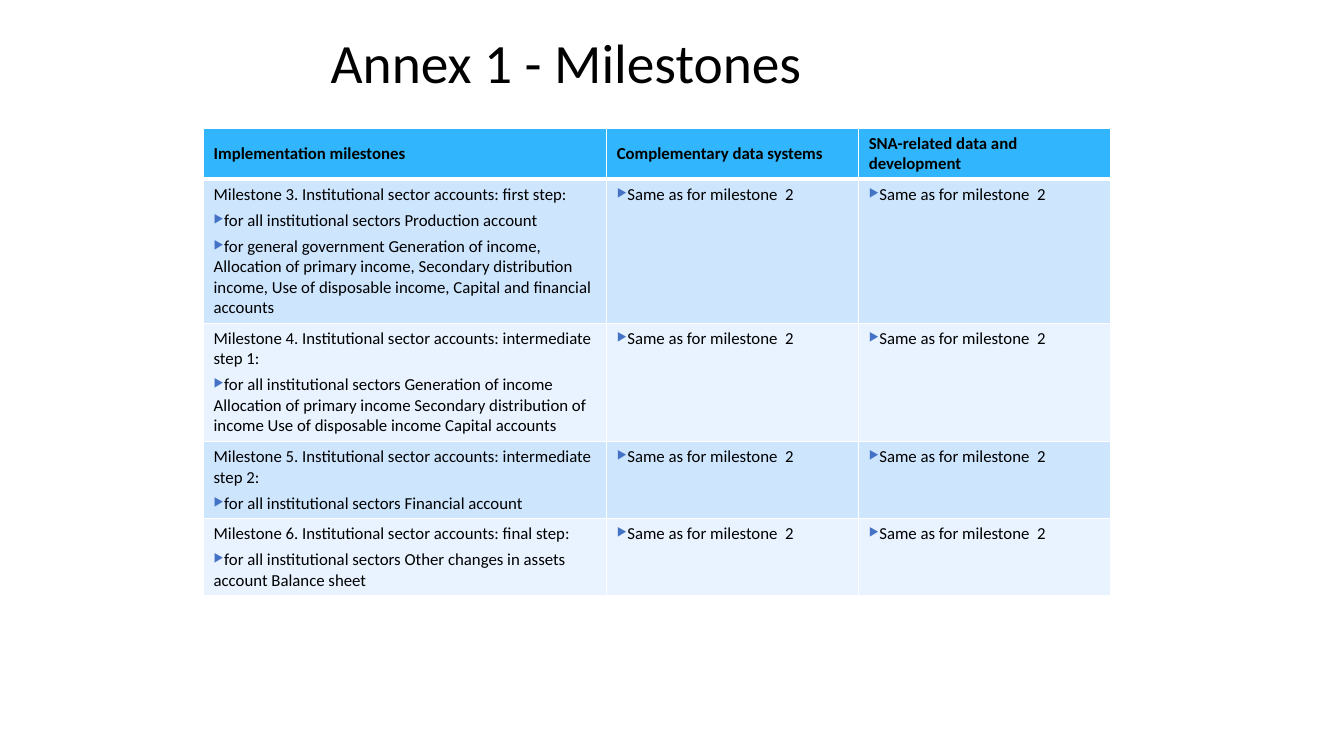
from pptx import Presentation
from pptx.dml.color import RGBColor
from pptx.enum.text import MSO_ANCHOR, MSO_AUTO_SIZE, PP_ALIGN
from pptx.oxml.ns import qn
from pptx.util import Cm, Pt
from lxml.etree import SubElement

BLACK = RGBColor(0x00, 0x00, 0x00)
WHITE = RGBColor(0xFF, 0xFF, 0xFF)
HEADER_BLUE = RGBColor(0x31, 0xB6, 0xFD)
BAND_DARK = RGBColor(0xCE, 0xE5, 0xFE)
BAND_LIGHT = RGBColor(0xE8, 0xF3, 0xFF)
BULLET_BLUE = RGBColor(0x44, 0x72, 0xC4)

HEADINGS = ["Implementation milestones", "Complementary data systems",
            "SNA-related data and development"]
SAME = "Same as for milestone  2"
# Each milestone: its name, then its bulleted accounts
MILESTONES = [
    ["Milestone 3. Institutional sector accounts: first step:",
     "for all institutional sectors Production account",
     "for general government Generation of income, Allocation of primary income, "
     "Secondary distribution income, Use of disposable income, "
     "Capital and financial accounts"],
    ["Milestone 4. Institutional sector accounts: intermediate step 1:",
     "for all institutional sectors Generation of income Allocation of primary income "
     "Secondary distribution of income Use of disposable income Capital accounts"],
    ["Milestone 5. Institutional sector accounts: intermediate step 2:",
     "for all institutional sectors Financial account"],
    ["Milestone 6. Institutional sector accounts: final step:",
     "for all institutional sectors Other changes in assets account Balance sheet"],
]
COLUMN_WIDTHS = [10.16, 6.35, 6.35]
ROW_HEIGHTS = [1.2, 3.6, 2.95, 1.9, 1.9]


class MilestoneSlide:
    font = "Calibri"

    def __init__(self, presentation):
        self.slide = presentation.slides.add_slide(presentation.slide_layouts[5])

    def format_runs(self, paragraph, size, bold=False):
        for run in paragraph.runs:
            run.font.name = self.font
            run.font.size = Pt(size)
            run.font.bold = bold
            run.font.color.rgb = BLACK

    def title(self, wording, left, top, width, height):
        title = self.slide.shapes.title
        title.left, title.top, title.width, title.height = map(
            Cm, (left, top, width, height))
        frame = title.text_frame
        frame.text = wording
        frame.word_wrap = True
        frame.auto_size = MSO_AUTO_SIZE.NONE
        frame.vertical_anchor = MSO_ANCHOR.MIDDLE
        heading = frame.paragraphs[0]
        heading.alignment = PP_ALIGN.LEFT
        heading.line_spacing = 0.9
        self.format_runs(heading, 39.6)

    def bullet(self, paragraph):
        properties = paragraph._p.get_or_add_pPr()
        properties.set("marL", "0")
        properties.set("indent", "0")
        color = SubElement(properties, qn("a:buClr"))
        SubElement(color, qn("a:srgbClr"), val=str(BULLET_BLUE))
        SubElement(properties, qn("a:buSzPct"), val="68000")
        SubElement(properties, qn("a:buChar"), char="▶")

    def borders(self, cell, top, bottom):
        properties = cell._tc.get_or_add_tcPr()
        for side, points in (("L", 1), ("R", 1), ("T", top), ("B", bottom)):
            line = SubElement(properties, qn(f"a:ln{side}"), w=str(Pt(points)))
            fill = SubElement(line, qn("a:solidFill"))
            SubElement(fill, qn("a:srgbClr"), val=str(WHITE))

    def cell(self, cell, lines, fill, bulleted_from=0, header=False, top=1, bottom=1):
        self.borders(cell, top, bottom)
        cell.fill.solid()
        cell.fill.fore_color.rgb = fill
        cell.vertical_anchor = MSO_ANCHOR.MIDDLE if header else MSO_ANCHOR.TOP
        cell.text_frame.text = "\n".join(lines)
        for index, paragraph in enumerate(cell.text_frame.paragraphs):
            paragraph.space_before = Pt(4)
            if not header and index >= bulleted_from:
                self.bullet(paragraph)
            self.format_runs(paragraph, 12, bold=header)

    def milestone_table(self, left, top):
        table = self.slide.shapes.add_table(
            len(ROW_HEIGHTS), len(COLUMN_WIDTHS), Cm(left), Cm(top),
            Cm(sum(COLUMN_WIDTHS)), Cm(sum(ROW_HEIGHTS))).table
        for column, width in zip(table.columns, COLUMN_WIDTHS):
            column.width = Cm(width)
        for row, height in zip(table.rows, ROW_HEIGHTS):
            row.height = Cm(height)

        # Header row
        for column, heading in enumerate(HEADINGS):
            self.cell(table.cell(0, column), [heading], HEADER_BLUE,
                      header=True, bottom=3)

        # Milestone rows in alternating bands
        for row, milestone in enumerate(MILESTONES, start=1):
            band = BAND_DARK if row % 2 else BAND_LIGHT
            top_border = 3 if row == 1 else 1
            self.cell(table.cell(row, 0), milestone, band,
                      bulleted_from=1, top=top_border)
            for column in (1, 2):
                self.cell(table.cell(row, column), [SAME], band, top=top_border)


def main():
    presentation = Presentation()
    presentation.slide_width = Cm(33.87)
    presentation.slide_height = Cm(19.05)
    annex = MilestoneSlide(presentation)
    annex.title("Annex 1 - Milestones", 8.08, 0.76, 20.45, 1.78)
    annex.milestone_table(5.13, 3.23)
    presentation.save("out.pptx")


if __name__ == "__main__":
    main()
